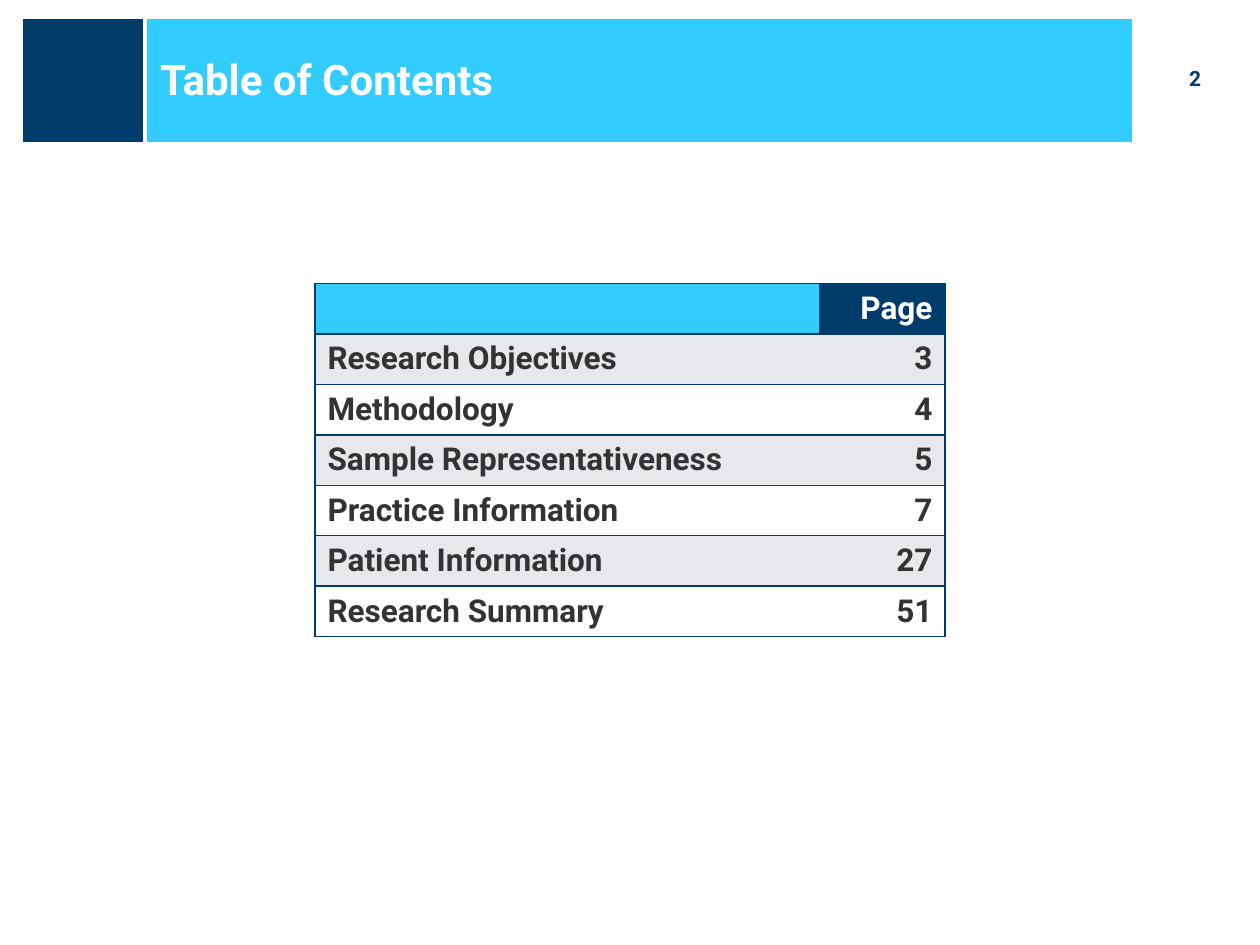
import dataclasses

import pptx
import pptx.dml.color
import pptx.enum.shapes
import pptx.enum.text
import pptx.oxml.ns
import pptx.util
from lxml import etree
from pptx.util import Inches

ALIGN = pptx.enum.text.PP_ALIGN
MIDDLE = pptx.enum.text.MSO_ANCHOR.MIDDLE


@dataclasses.dataclass(frozen=True)
class Theme:
    """Colours, font and type sizes of the slide."""
    navy: str = "003C69"
    sky: str = "33CCFF"
    white: str = "FFFFFF"
    band: str = "E7E8EB"
    ink: str = "333333"
    font: str = "Roboto"
    title: int = 24
    table: int = 18
    number: int = 12


THEME = Theme()
CONTENTS = [
    ("Research Objectives", 3),
    ("Methodology", 4),
    ("Sample Representativeness", 5),
    ("Practice Information", 7),
    ("Patient Information", 27),
    ("Research Summary", 51),
]


def rgb(color):
    """Turn a hex string into a colour."""
    return pptx.dml.color.RGBColor.from_string(color)


def write(tf, text, size, color, align=ALIGN.LEFT):
    """Write one bold line into a text frame."""
    tf.text = text
    p = tf.paragraphs[0]
    p.alignment = align
    for r in p.runs:
        r.font.name = THEME.font
        r.font.size = pptx.util.Pt(size)
        r.font.bold = True
        r.font.color.rgb = rgb(color)


def add_block(s, box, color):
    """Add a filled rectangle with a white outline."""
    sp = s.shapes.add_shape(pptx.enum.shapes.MSO_SHAPE.RECTANGLE, *map(Inches, box))
    sp.shadow.inherit = False
    sp.fill.solid()
    sp.fill.fore_color.rgb = rgb(color)
    sp.line.color.rgb = rgb(THEME.white)
    sp.line.width = pptx.util.Pt(2)


def add_header(s, box):
    """Add the title band with its square and the page number to its right."""
    left, top, width, height = box
    add_block(s, (left + 0.83, top, width - 0.83, height), THEME.sky)
    add_block(s, (left, top, 0.98, height), THEME.navy)

    title = s.shapes.title
    title.left, title.top = Inches(left + 1), Inches(top + 0.11)
    title.width, title.height = Inches(width - 1), Inches(0.75)
    title.text_frame.vertical_anchor = MIDDLE
    write(title.text_frame, "Table of Contents", THEME.title, THEME.white)
    s.shapes.element.append(title.element)

    number = s.shapes.add_textbox(
        Inches(left + width + 0.12), Inches(top + 0.33), Inches(0.73), Inches(0.3))
    number.text_frame.word_wrap = True
    write(number.text_frame, "2", THEME.number, THEME.navy, ALIGN.CENTER)


def set_borders(cell, sides):
    """Draw navy borders on the given sides and clear the others."""
    tcPr = cell._tc.get_or_add_tcPr()
    for side in "LRTB":
        ln = etree.SubElement(
            tcPr, pptx.oxml.ns.qn(f"a:ln{side}"), w=str(pptx.util.Pt(1)))
        if side in sides:
            fill = etree.SubElement(ln, pptx.oxml.ns.qn("a:solidFill"))
            etree.SubElement(fill, pptx.oxml.ns.qn("a:srgbClr"), val=THEME.navy)
        else:
            etree.SubElement(ln, pptx.oxml.ns.qn("a:noFill"))


def format_cell(cell, text, fill, color, align, sides):
    """Fill, border and write one table cell."""
    set_borders(cell, sides)
    cell.fill.solid()
    cell.fill.fore_color.rgb = rgb(fill)
    cell.vertical_anchor = MIDDLE
    write(cell.text_frame, text, THEME.table, color, align)


def add_contents(s, box):
    """Add the table of sections and their pages."""
    rows = [("", "Page"), *CONTENTS]
    table = s.shapes.add_table(len(rows), 2, *map(Inches, box)).table
    table.first_row = table.horz_banding = False
    table.columns[0].width = Inches(box[2] * 0.8)
    table.columns[1].width = Inches(box[2] * 0.2)
    for i, (section, page) in enumerate(rows):
        if i == 0:
            fills, color = (THEME.sky, THEME.navy), THEME.white
        else:
            fills, color = (THEME.band if i % 2 else THEME.white,) * 2, THEME.ink
        format_cell(table.cell(i, 0), section, fills[0], color, ALIGN.LEFT, "LTB")
        format_cell(table.cell(i, 1), str(page), fills[1], color, ALIGN.RIGHT, "RTB")


def main():
    """Build the slide and save it."""
    prs = pptx.Presentation()
    prs.slide_width, prs.slide_height = Inches(10), Inches(7.5)
    s = prs.slides.add_slide(prs.slide_layouts[5])
    add_header(s, (0.17, 0.14, 8.83, 1))
    add_contents(s, (2.5, 2.25, 5, 2.8))
    prs.save("out.pptx")


if __name__ == "__main__":
    main()
